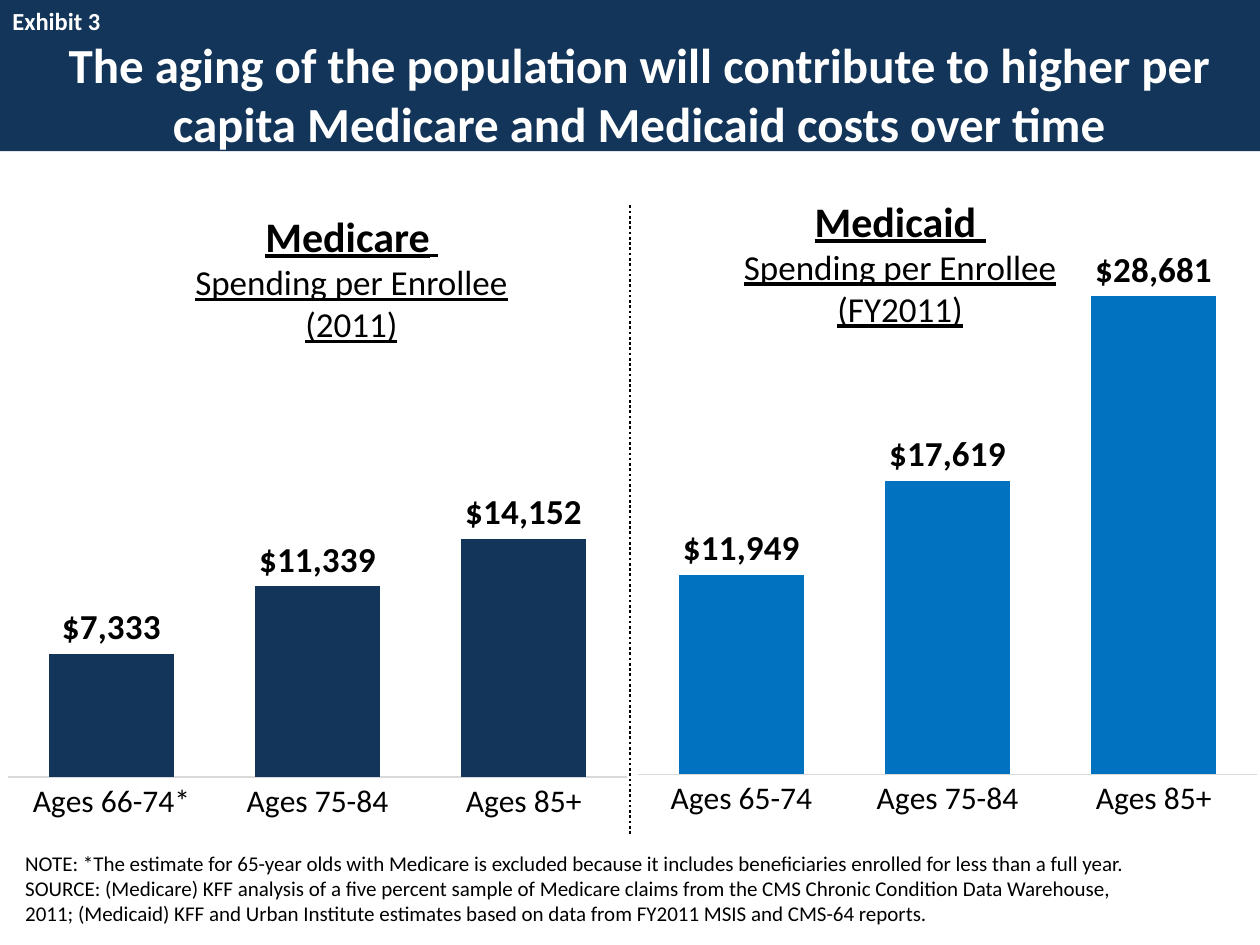
from lxml import etree
from pptx import Presentation
from pptx.chart import data
from pptx.dml import color
from pptx.enum import chart as kinds, dml, shapes, text
from pptx.oxml import parse_xml, ns
from pptx.util import Pt

NAVY, BLUE, WHITE, BLACK = "133559", "0072C0", "FFFFFF", "000000"
MONEY = '"$"#,##0'


def hue(code):
    return color.RGBColor.from_string(code)


def style(font, tint, **values):
    for key, value in {"name": "Calibri", **values}.items():
        setattr(font, key, value)
    font.color.rgb = hue(tint)


deck = Presentation()
deck.slide_width, deck.slide_height = Pt(720), Pt(540)
slide = deck.slides.add_slide(deck.slide_layouts[1])
tree = slide.shapes

# Header band, behind the title
band = tree.add_shape(shapes.MSO_SHAPE.RECTANGLE, 0, 0, Pt(720), Pt(86.4))
band.shadow.inherit = False
band.fill.solid()
band.fill.fore_color.rgb = hue(NAVY)
band.line.fill.background()
tree._spTree.insert(2, band._element)

# Title
title = tree.title
title.left, title.top, title.width, title.height = Pt(5.8), Pt(13.7), Pt(718.6), Pt(41)
frame = title.text_frame
frame.auto_size = text.MSO_AUTO_SIZE.NONE
frame.vertical_anchor = text.MSO_ANCHOR.TOP
frame.margin_top = Pt(6)
frame.text = ("The aging of the population will contribute to higher per "
              "capita Medicare and Medicaid costs over time")
frame.paragraphs[0].alignment = text.PP_ALIGN.CENTER
style(frame.paragraphs[0].runs[0].font, WHITE, size=Pt(28), bold=True)

# Exhibit number
tag = tree.add_textbox(0, 0, Pt(72), Pt(24.5)).text_frame
tag.word_wrap = False
tag.text = "Exhibit 3"
style(tag.paragraphs[0].runs[0].font, WHITE, size=Pt(14), bold=True)

# Column charts: place, plot top and height, colour, first group, values
charts = [
    ((358.6, 140.4, 365.8, 340.6), (0.048, 0.839), BLUE, "Ages 65-74", (11949, 17619, 28681)),
    ((-1.4, 151.9, 365.8, 329), (0.011, 0.877), NAVY, "Ages 66-74*", (7333, 11339, 14152)),
]
for place, (top, high), tint, first, costs in charts:
    table = data.CategoryChartData(number_format=MONEY)
    table.categories = [first, "Ages 75-84", "Ages 85+"]
    table.add_series("Series 1", costs)
    chart = tree.add_chart(kinds.XL_CHART_TYPE.COLUMN_CLUSTERED, *map(Pt, place), table).chart
    chart.has_legend = chart.has_title = False
    style(chart.font, BLACK, size=Pt(10))

    # Axes
    cat, val = chart.category_axis, chart.value_axis
    cat.major_tick_mark = kinds.XL_TICK_MARK.NONE
    style(cat.tick_labels.font, BLACK, size=Pt(18))
    cat.format.line.color.rgb = hue("D9D9D9")
    cat.format.line.width = Pt(0.75)
    val.minimum_scale, val.maximum_scale = 0, 30000
    val.has_major_gridlines = val.visible = False

    # Bars and value labels
    plot = chart.plots[0]
    plot.gap_width, plot.overlap, plot.vary_by_categories = 65, -27, False
    bars = plot.series[0]
    bars.invert_if_negative = False
    bars.format.fill.solid()
    bars.format.fill.fore_color.rgb = hue(tint)
    labels = bars.data_labels
    labels.show_value = True
    labels.number_format, labels.number_format_is_linked = MONEY, False
    labels.position = kinds.XL_LABEL_POSITION.OUTSIDE_END
    style(labels.font, BLACK, size=Pt(20), bold=True)

    # Fixed plot area
    area = chart._chartSpace.chart.plotArea
    for old in area.findall(ns.qn("c:layout")):
        area.remove(old)
    rules = [("layoutTarget", "inner"), ("xMode", "edge"), ("yMode", "edge"),
             ("x", 0.017), ("y", top), ("w", 0.966), ("h", high)]
    inner = "".join(f'<c:{name} val="{value}"/>' for name, value in rules)
    area.insert(0, parse_xml(f'<c:layout {ns.nsdecls("c")}><c:manualLayout>{inner}'
                             '</c:manualLayout></c:layout>'))

# Dotted divider
rule = tree.add_connector(shapes.MSO_CONNECTOR.STRAIGHT, Pt(360), Pt(117.4), Pt(360), Pt(477.4))
rule.line.color.rgb = hue(BLACK)
rule.line.width = Pt(1.5)
rule.line.dash_style = dml.MSO_LINE.ROUND_DOT
etree.SubElement(rule._element.spPr, ns.qn("a:effectLst"))

# Chart headings
heads = [
    ((370, 108, 288.7, 85), "Medicaid", 24, "(FY2011)"),
    ((43.9, 116.6, 313.9, 85), "Medicare", 20, "(2011)"),
]
for place, name, gap, year in heads:
    frame = tree.add_textbox(*map(Pt, place)).text_frame
    frame.word_wrap = True
    lines = [[(name, 24, True), (" ", gap, False)],
             [("Spending per Enrollee", 20, False)], [(year, 20, False)]]
    for i, line in enumerate(lines):
        para = frame.add_paragraph() if i else frame.paragraphs[0]
        para.alignment = text.PP_ALIGN.CENTER
        for words, size, bold in line:
            run = para.add_run()
            run.text = words
            style(run.font, BLACK, size=Pt(size), bold=bold, underline=True)

# Note and source
body = slide.placeholders[1]
body.left, body.top, body.width, body.height = Pt(7.2), Pt(489.6), Pt(655.2), Pt(43.2)
frame = body.text_frame
frame.auto_size = text.MSO_AUTO_SIZE.NONE
frame.vertical_anchor = text.MSO_ANCHOR.BOTTOM
frame.text = (
    "NOTE: *The estimate for 65-year olds with Medicare is excluded because it includes "
    "beneficiaries enrolled for less than a full year.\n"
    "SOURCE: (Medicare) KFF analysis of a five percent sample of Medicare claims from the CMS "
    "Chronic Condition Data Warehouse, 2011; (Medicaid) KFF and Urban Institute estimates based "
    "on data from FY2011 MSIS and CMS-64 reports.")
for para in frame.paragraphs:
    props = para._p.get_or_add_pPr()
    props.set("marL", "0")
    props.set("indent", "0")
    etree.SubElement(props, ns.qn("a:buNone"))
    para.space_before = Pt(0)
    style(para.runs[0].font, BLACK, size=Pt(12))

deck.save("out.pptx")
